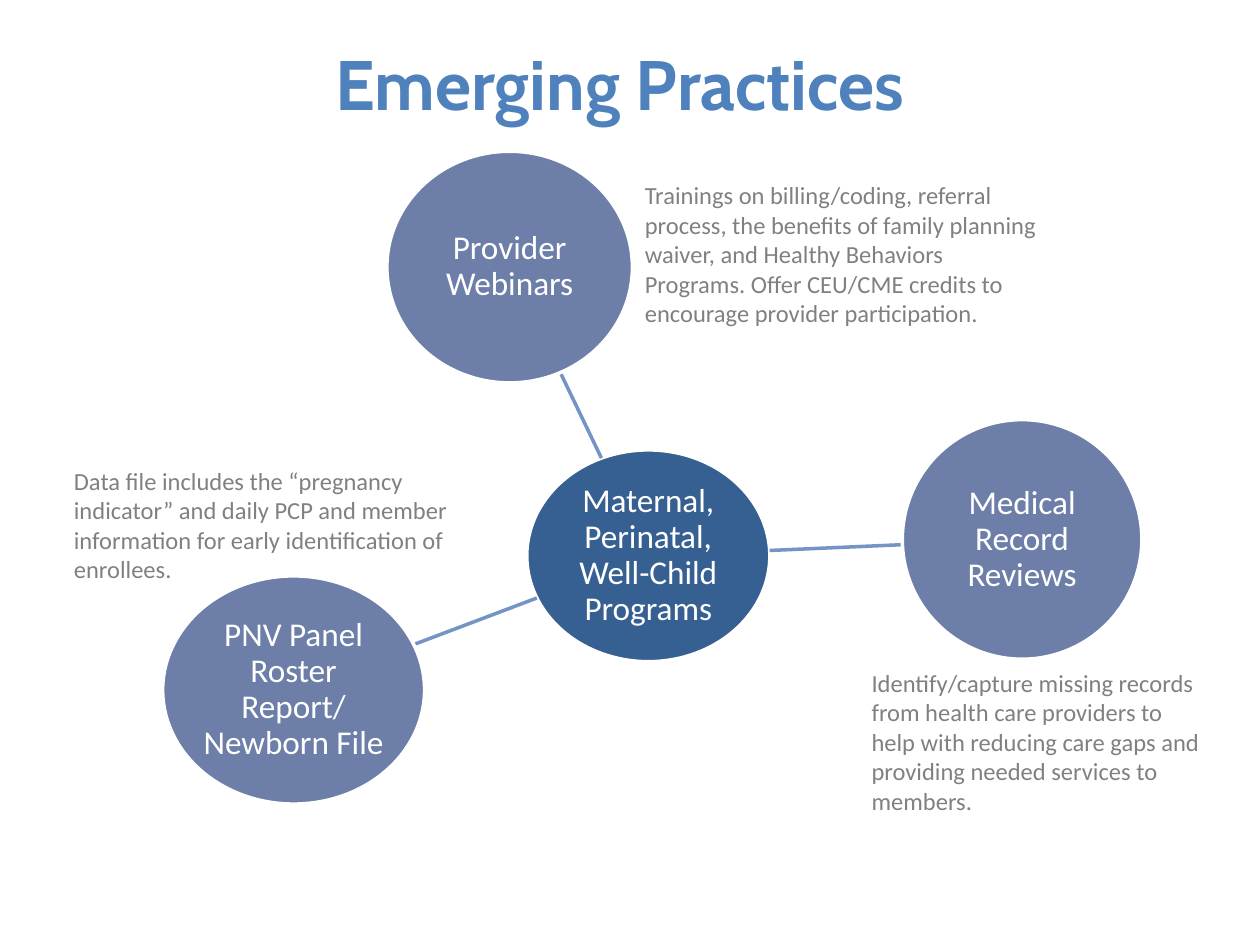
import math
from dataclasses import dataclass

import pptx
import pptx.dml.color
import pptx.enum.shapes
import pptx.enum.text
import pptx.oxml.ns
import pptx.util
from lxml import etree

Cm = pptx.util.Cm
Pt = pptx.util.Pt
RGBColor = pptx.dml.color.RGBColor
Align = pptx.enum.text.PP_ALIGN
Anchor = pptx.enum.text.MSO_ANCHOR


@dataclass(frozen=True)
class Theme:
    heading_font: str = "Cabin"
    body_font: str = "Calibri"
    title: str = "4F81BD"
    hub: str = "376092"
    satellite: str = "6D7FA8"
    spoke: str = "7394C5"
    note: str = "808080"
    white: str = "FFFFFF"
    title_size: float = 40
    circle_size: float = 19
    note_size: float = 14
    line_width: float = 2


THEME = Theme()


@dataclass(frozen=True)
class Block:
    """A text and its frame, in centimetres."""
    text: str
    left: float
    top: float
    width: float
    height: float

    @property
    def frame(self) -> tuple:
        return Cm(self.left), Cm(self.top), Cm(self.width), Cm(self.height)

    @property
    def center(self) -> tuple[float, float]:
        return self.left + self.width / 2, self.top + self.height / 2

    def edge_toward(self, other: "Block") -> tuple[float, float]:
        """Point where the line between two centres crosses this ellipse."""
        x, y = self.center
        dx, dy = other.center[0] - x, other.center[1] - y
        reach = 1 / math.hypot(dx / (self.width / 2), dy / (self.height / 2))
        return x + dx * reach, y + dy * reach


TITLE = Block("Emerging Practices", 1.55, 0.64, 21.89, 2.03)
HUB = Block("Maternal, Perinatal, Well-Child Programs", 10.62, 9.07, 4.9, 4.27)
SATELLITES = [
    Block("Provider Webinars", 7.8, 3.05, 4.95, 4.67),
    Block("Medical Record Reviews", 18.19, 8.46, 4.83, 4.83),
    Block("PNV Panel Roster Report/ Newborn File", 3.28, 11.61, 5.28, 4.6),
]
NOTES = [
    Block("Trainings on billing/coding, referral process, the benefits of family "
          "planning waiver, and Healthy Behaviors Programs. Offer CEU/CME credits "
          "to encourage provider participation.", 12.75, 3.51, 8.66, 3.25),
    Block("Identify/capture missing records from health care providers to help "
          "with reducing care gaps and providing needed services to members.",
          17.32, 13.34, 7.21, 3.25),
    Block("Data file includes the “pregnancy indicator” and daily PCP and member "
          "information for early identification of enrollees.",
          1.24, 9.27, 8.05, 2.64),
]


def color(value: str) -> RGBColor:
    return RGBColor.from_string(value)


def write(box, text: str, font: str, size: float, ink: str,
          align: Align, anchor: Anchor, bold: bool = False):
    """Put one formatted paragraph in a shape and return the paragraph."""
    box.text_frame.text = text
    box.text_frame.word_wrap = True
    box.text_frame.vertical_anchor = anchor
    para = box.text_frame.paragraphs[0]
    para.alignment = align
    for span in para.runs:
        span.font.name = font
        span.font.size = Pt(size)
        span.font.bold = bold
        span.font.color.rgb = color(ink)
    return para


def draw_circle(page, block: Block, fill: str) -> None:
    circle = page.shapes.add_shape(
        pptx.enum.shapes.MSO_SHAPE.OVAL, *block.frame)
    circle.shadow.inherit = False
    circle.fill.solid()
    circle.fill.fore_color.rgb = color(fill)
    circle.line.color.rgb = color(THEME.white)
    circle.line.width = Pt(THEME.line_width)
    para = write(circle, block.text, THEME.body_font, THEME.circle_size,
                 THEME.white, Align.CENTER, Anchor.MIDDLE)
    para.line_spacing = 0.9
    frame = circle.text_frame
    frame.margin_left = frame.margin_right = Cm(0.03)
    frame.margin_top = frame.margin_bottom = Cm(0.03)


def draw_spoke(page, start: Block, end: Block) -> None:
    points = start.edge_toward(end) + end.edge_toward(start)
    spoke = page.shapes.add_connector(
        pptx.enum.shapes.MSO_CONNECTOR.STRAIGHT, *map(Cm, points))
    spoke.line.color.rgb = color(THEME.spoke)
    spoke.line.width = Pt(THEME.line_width)
    etree.SubElement(spoke.element.spPr, pptx.oxml.ns.qn("a:effectLst"))


def draw_title(page, block: Block) -> None:
    box = page.shapes.add_textbox(*block.frame)
    write(box, block.text, THEME.heading_font, THEME.title_size, THEME.title,
          Align.CENTER, Anchor.MIDDLE, bold=True)


def draw_note(page, block: Block) -> None:
    box = page.shapes.add_textbox(*block.frame)
    write(box, block.text, THEME.body_font, THEME.note_size, THEME.note,
          Align.LEFT, Anchor.TOP)
    box.text_frame.auto_size = pptx.enum.text.MSO_AUTO_SIZE.SHAPE_TO_FIT_TEXT


def main() -> None:
    deck = pptx.Presentation()
    deck.slide_width, deck.slide_height = Cm(25.4), Cm(19.05)
    page = deck.slides.add_slide(deck.slide_layouts[6])

    draw_title(page, TITLE)

    # Hub with its satellites
    draw_circle(page, HUB, THEME.hub)
    for satellite in SATELLITES:
        draw_spoke(page, HUB, satellite)
        draw_circle(page, satellite, THEME.satellite)

    # Explanations beside the satellites
    for note in NOTES:
        draw_note(page, note)

    deck.save("out.pptx")


if __name__ == "__main__":
    main()
